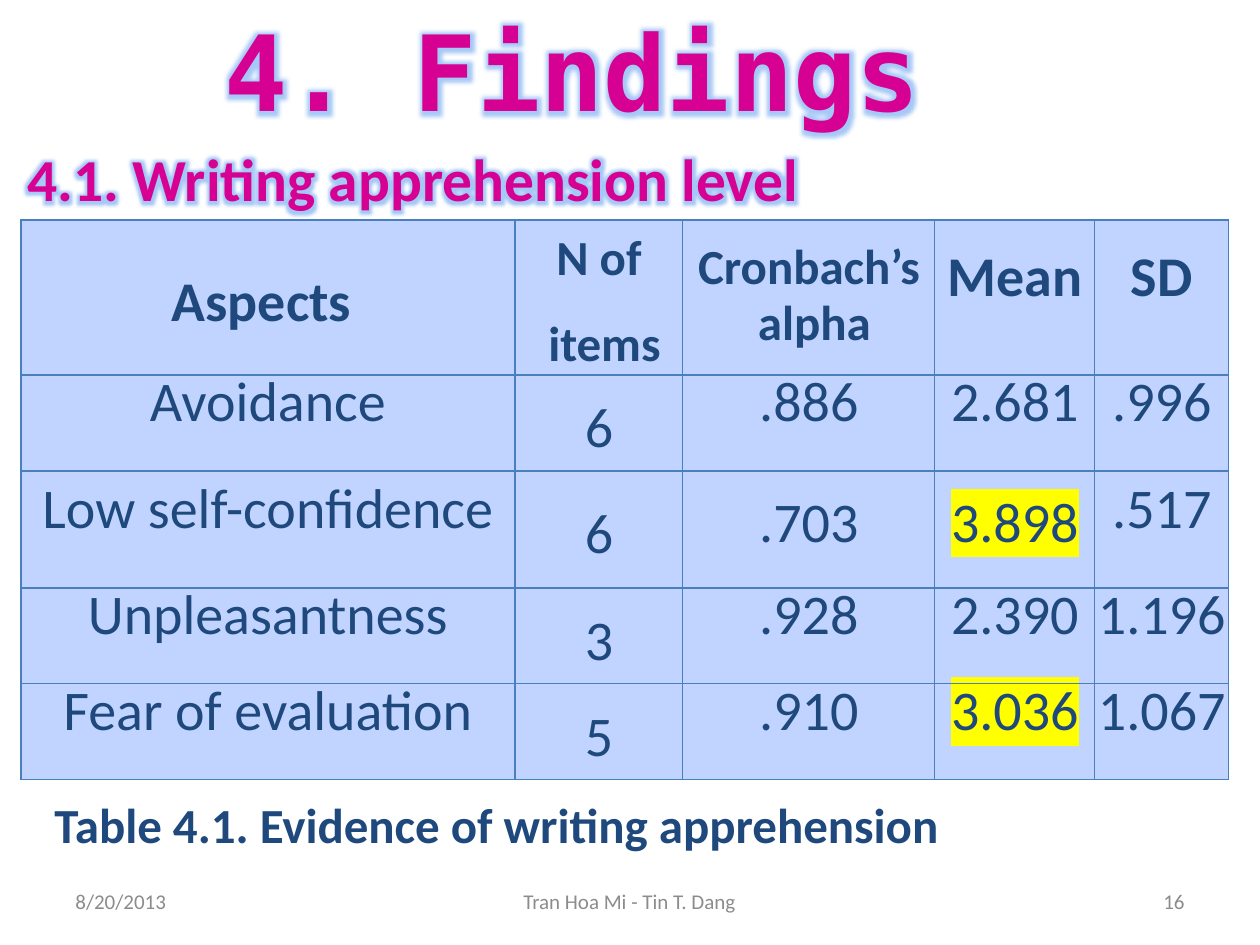
from dataclasses import dataclass

from lxml import etree
from pptx import Presentation
from pptx.dml.color import RGBColor
from pptx.enum.text import MSO_ANCHOR, PP_ALIGN
from pptx.oxml.ns import qn
from pptx.util import Pt

LEFT, CENTER, RIGHT = PP_ALIGN.LEFT, PP_ALIGN.CENTER, PP_ALIGN.RIGHT
TOP, MIDDLE = MSO_ANCHOR.TOP, MSO_ANCHOR.MIDDLE
EMU_PER_PX = 914400 / 126


@dataclass(frozen=True)
class Theme:
    body_font: str = "Calibri"
    title_font: str = "DejaVu Sans Mono"
    accent: str = "D60093"
    ink: str = "1F497D"
    muted: str = "8C8C8C"
    outline: str = "467AB8"
    glow: str = "A6C8F6"
    cell: str = "C0D4FF"
    border: str = "4B7EBC"
    marker: str = "FFFF00"
    title_size: int = 60
    heading_size: int = 34
    table_size: int = 32
    small_size: int = 28
    footer_size: int = 12


THEME = Theme()

COLUMNS = [494, 168, 252, 160, 134]
ROWS = [155, 96, 117, 96, 96]
TABLE = [
    ["Aspects ", "N of\n items", "Cronbach’s\n alpha", "Mean", "SD"],
    ["Avoidance", "6", ".886", "2.681", ".996"],
    ["Low self-confidence", "6", ".703", "3.898", ".517"],
    ["Unpleasantness", "3", ".928", "2.390", "1.196"],
    ["Fear of evaluation", "5", ".910", "3.036", "1.067"],
]
HIGHLIGHTED = {(2, 3), (4, 3)}
LOWERED = {(0, 2), (2, 2), (2, 3)}
SMALL_HEADERS = {(0, 1), (0, 2)}


def px(length):
    return int(length * EMU_PER_PX)


def add_solid(parent, color):
    fill = etree.SubElement(parent, qn("a:solidFill"))
    etree.SubElement(fill, qn("a:srgbClr"), val=color)


def style(para, size, color, bold=False, font=THEME.body_font, align=LEFT):
    para.alignment = align
    para.font.name = font
    para.font.size = Pt(size)
    para.font.bold = bold
    para.font.color.rgb = RGBColor.from_string(color)


def add_text(page, box, text, size, color, anchor=TOP, **options):
    frame = page.shapes.add_textbox(*map(px, box)).text_frame
    frame.word_wrap = True
    frame.vertical_anchor = anchor
    para = frame.paragraphs[0]
    span = para.add_run()
    span.text = text
    style(para, size, color, **options)
    return span


def add_glow(span):
    properties = span._r.get_or_add_rPr()
    line = etree.SubElement(properties, qn("a:ln"), w=str(Pt(0.83)))
    add_solid(line, THEME.outline)
    add_solid(properties, THEME.accent)
    effects = etree.SubElement(properties, qn("a:effectLst"))
    glow = etree.SubElement(effects, qn("a:glow"), rad=str(Pt(8)))
    etree.SubElement(glow, qn("a:srgbClr"), val=THEME.glow)


def add_headings(page, box):
    left, top, width, height = box
    title = add_text(page, (left + 63, top, 998, 140), "4. Findings",
                     THEME.title_size, THEME.accent, bold=True,
                     font=THEME.title_font, align=CENTER)
    subtitle = add_text(page, (left, top + height - 84, 819, 84),
                        "4.1. Writing apprehension level ",
                        THEME.heading_size, THEME.accent, bold=True, align=CENTER)
    for span in (title, subtitle):
        add_glow(span)


def format_cell(cell):
    properties = cell._tc.get_or_add_tcPr()
    for side in ("a:lnL", "a:lnR", "a:lnT", "a:lnB"):
        add_solid(etree.SubElement(properties, qn(side), w=str(Pt(0.75))), THEME.border)
    cell.fill.solid()
    cell.fill.fore_color.rgb = RGBColor.from_string(THEME.cell)
    cell.vertical_anchor = MIDDLE


def fill_cell(cell, row, column):
    place = (row, column)
    format_cell(cell)
    count_column = column == 1
    inset = 0 if count_column else 2
    cell.margin_left = cell.margin_right = px(2)
    cell.margin_top = px(inset + (28 if place in LOWERED else 0))
    cell.margin_bottom = px(inset)
    cell.text = TABLE[row][column]
    size = THEME.small_size if place in SMALL_HEADERS else THEME.table_size
    for index, para in enumerate(cell.text_frame.paragraphs):
        style(para, size, THEME.ink, bold=row == 0, align=CENTER)
        para.line_spacing = 1.15 if count_column or place == (0, 0) else Pt(16)
        if count_column:
            para.space_after = Pt(10)
        elif index:
            para.space_before = Pt(16)
        if place in HIGHLIGHTED:
            properties = para.runs[0]._r.get_or_add_rPr()
            marker = etree.SubElement(properties, qn("a:highlight"))
            etree.SubElement(marker, qn("a:srgbClr"), val=THEME.marker)


def add_findings_table(page, box):
    table = page.shapes.add_table(len(ROWS), len(COLUMNS), *map(px, box)).table
    table.first_row = table.horz_banding = False
    for column, width in zip(table.columns, COLUMNS):
        column.width = px(width)
    for row, height in zip(table.rows, ROWS):
        row.height = px(height)
    for row in range(len(ROWS)):
        for column in range(len(COLUMNS)):
            fill_cell(table.cell(row, column), row, column)


def add_footer(page, box):
    left, top, width, height = box
    parts = [
        ("8/20/2013", 0, 294, LEFT),
        ("Tran Hoa Mi - Tin T. Dang", (width - 399) // 2, 399, CENTER),
        ("16", width - 294, 294, RIGHT),
    ]
    for text, offset, part_width, align in parts:
        add_text(page, (left + offset, top, part_width, height), text,
                 THEME.footer_size, THEME.muted, anchor=MIDDLE, align=align)


def main():
    deck = Presentation()
    deck.slide_width, deck.slide_height = px(1260), px(945)
    page = deck.slides.add_slide(deck.slide_layouts[6])
    add_footer(page, (63, 876, 1134, 50))
    add_findings_table(page, (21, 220, sum(COLUMNS), sum(ROWS)))
    add_text(page, (42, 788, 1081, 72), "Table 4.1. Evidence of writing apprehension",
             THEME.small_size, THEME.ink, bold=True)
    add_headings(page, (10, 0, 1061, 220))
    deck.save("out.pptx")


if __name__ == "__main__":
    main()
